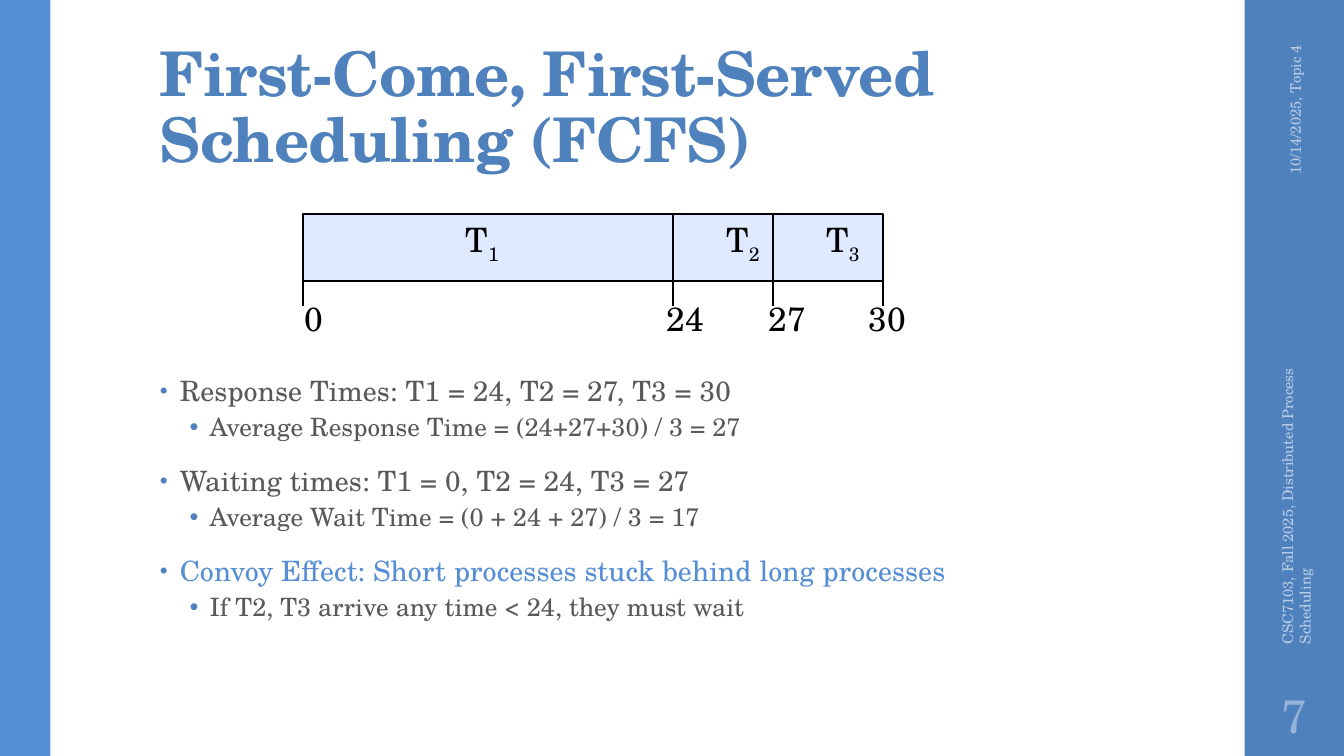
from lxml import etree
from pptx import Presentation, util as u
from pptx.dml.color import RGBColor
from pptx.enum import shapes, text
from pptx.oxml import ns

FONT = "TeX Gyre Schola"
BLUE, SKY, GREY, BLACK, PALE = "4F81BD", "558ED5", "595959", "000000", "B9CDE5"
rgb = RGBColor.from_string

prs = Presentation()
prs.slide_width, prs.slide_height = u.Pt(484.5), u.Pt(272.5)
slide = prs.slides.add_slide(prs.slide_layouts[1])


def at(x, y, w, h):
    return [int(prs.slide_width * x / 100), int(prs.slide_height * y / 100),
            int(prs.slide_width * w / 100), int(prs.slide_height * h / 100)]


def label(parts, box, size, color, align=text.PP_ALIGN.LEFT, wrap=True):
    s = slide.shapes.add_textbox(*at(*box))
    tf = s.text_frame
    tf.word_wrap = wrap
    tf.vertical_anchor = text.MSO_ANCHOR.MIDDLE
    p = tf.paragraphs[0]
    p.alignment = align
    for i, part in enumerate(parts):
        r = p.add_run()
        r.text = part
        r.font.name, r.font.size = FONT, u.Pt(size)
        r.font.color.rgb = rgb(color)
        if i:
            r.font._element.set("baseline", "-25000")
    return s


blocks = [
    ((92.6, 0, 7.4, 100), BLUE, False),
    ((0, 0, 3.75, 100), SKY, False),
    ((22.56, 28.27, 43.12, 8.95), "DFE9FF", True),
]
for box, color, outlined in blocks:
    s = slide.shapes.add_shape(shapes.MSO_SHAPE.RECTANGLE, *at(*box))
    s.shadow.inherit = False
    s.fill.solid()
    s.fill.fore_color.rgb = rgb(color)
    if outlined:
        s.line.color.rgb = rgb(BLACK)
        s.line.width = u.Pt(0.75)
    else:
        s.line.fill.background()

title = slide.shapes.title
title.left, title.top, title.width, title.height = at(10.4, 4.23, 79.49, 20.37)
tf = title.text_frame
tf.text = "First-Come, First-Served Scheduling (FCFS)"
tf.auto_size = text.MSO_AUTO_SIZE.NONE
tf.vertical_anchor = text.MSO_ANCHOR.BOTTOM
tf.margin_top = u.Inches(0.03)
p = tf.paragraphs[0]
p.alignment, p.line_spacing = text.PP_ALIGN.LEFT, 0.9
r = p.runs[0]
r.font.name, r.font.size, r.font.bold = FONT, u.Pt(22.2), True
r.font.color.rgb = rgb(BLUE)
r.font._element.set("spc", "-25")

points = [
    (0, "Response Times: T1 = 24, T2 = 27, T3 = 30", GREY),
    (1, "Average Response Time = (24+27+30) / 3 = 27", GREY),
    (0, "Waiting times: T1 = 0, T2 = 24, T3 = 27", GREY),
    (1, "Average Wait Time = (0 + 24 + 27) / 3 = 17", GREY),
    (0, "Convoy Effect: Short processes stuck behind long processes", SKY),
    (1, "If T2, T3 arrive any time < 24, they must wait", GREY),
]
levels = [
    dict(size=10.1, line=0.95, before=7.1, after=1, indent=0.1, bullet=80, spc=5),
    dict(size=9.1, line=0.9, before=1.5, after=1.5, indent=0.25, bullet=100, spc=0),
]
body = slide.placeholders[1]
body.left, body.top, body.width, body.height = at(10.4, 48.35, 70.43, 41.8)
tf = body.text_frame
tf.text = "\n".join(line for _, line, _ in points)
tf.auto_size = text.MSO_AUTO_SIZE.NONE
for p, (level, _, color) in zip(tf.paragraphs, points):
    style = levels[level]
    p.level, p.line_spacing = level, style["line"]
    p.space_before, p.space_after = u.Pt(style["before"]), u.Pt(style["after"])
    r = p.runs[0]
    r.font.name, r.font.size = FONT, u.Pt(style["size"])
    r.font.color.rgb = rgb(color)
    r.font._element.set("spc", str(style["spc"]))
    pPr = p._p.get_or_add_pPr()
    pPr.set("marL", str(u.Inches(style["indent"])))
    pPr.set("indent", str(u.Inches(-0.1)))
    bullet_color = etree.SubElement(pPr, ns.qn("a:buClr"))
    etree.SubElement(bullet_color, ns.qn("a:srgbClr"), val=BLUE)
    etree.SubElement(pPr, ns.qn("a:buSzPct"), val=str(style["bullet"] * 1000))
    etree.SubElement(pPr, ns.qn("a:buFont"), typeface="Arial")
    etree.SubElement(pPr, ns.qn("a:buChar"), char="•")

date = label(["10/14/2025, Topic 4"], (88.56, 14.55, 15.6, 5.29), 5.3, PALE,
             text.PP_ALIGN.RIGHT)
footer = label(["CSC7103, Fall 2025, Distributed Process Scheduling"],
               (81.72, 58.99, 29.42, 5.29), 5.3, PALE)
footer.text_frame.margin_right = u.Inches(0.2)
date.rotation = footer.rotation = 270
number = label(["7"], (92.6, 90.15, 7.4, 8.73), 16.8, "95B3D7",
               text.PP_ALIGN.CENTER)
number.text_frame.margin_left = number.text_frame.margin_right = u.Inches(0.05)

for task, x in enumerate((33.2, 52.6, 60.03), 1):
    label(["T", str(task)], (x, 28.04, 5.65, 7.94), 12.1, BLACK, wrap=False)

marks = [
    ("0", 22.56, 37.22, 21.2, 4.46),
    ("24", 50.07, 28.27, 48.16, 5.79),
    ("27", 57.55, 28.27, 55.72, 5.79),
    ("30", 65.68, 37.22, 63.17, 5.79),
]
for time, x, top, left, width in marks:
    c = slide.shapes.add_connector(shapes.MSO_CONNECTOR.STRAIGHT,
                                   *at(x, top, x, 40.48))
    c.line.color.rgb = rgb(BLACK)
    c.line.width = u.Pt(0.75)
    etree.SubElement(c._element.spPr, ns.qn("a:effectLst"))
    label([time], (left, 38.1, width, 7.94), 12.1, BLACK, wrap=False)

prs.save("out.pptx")
